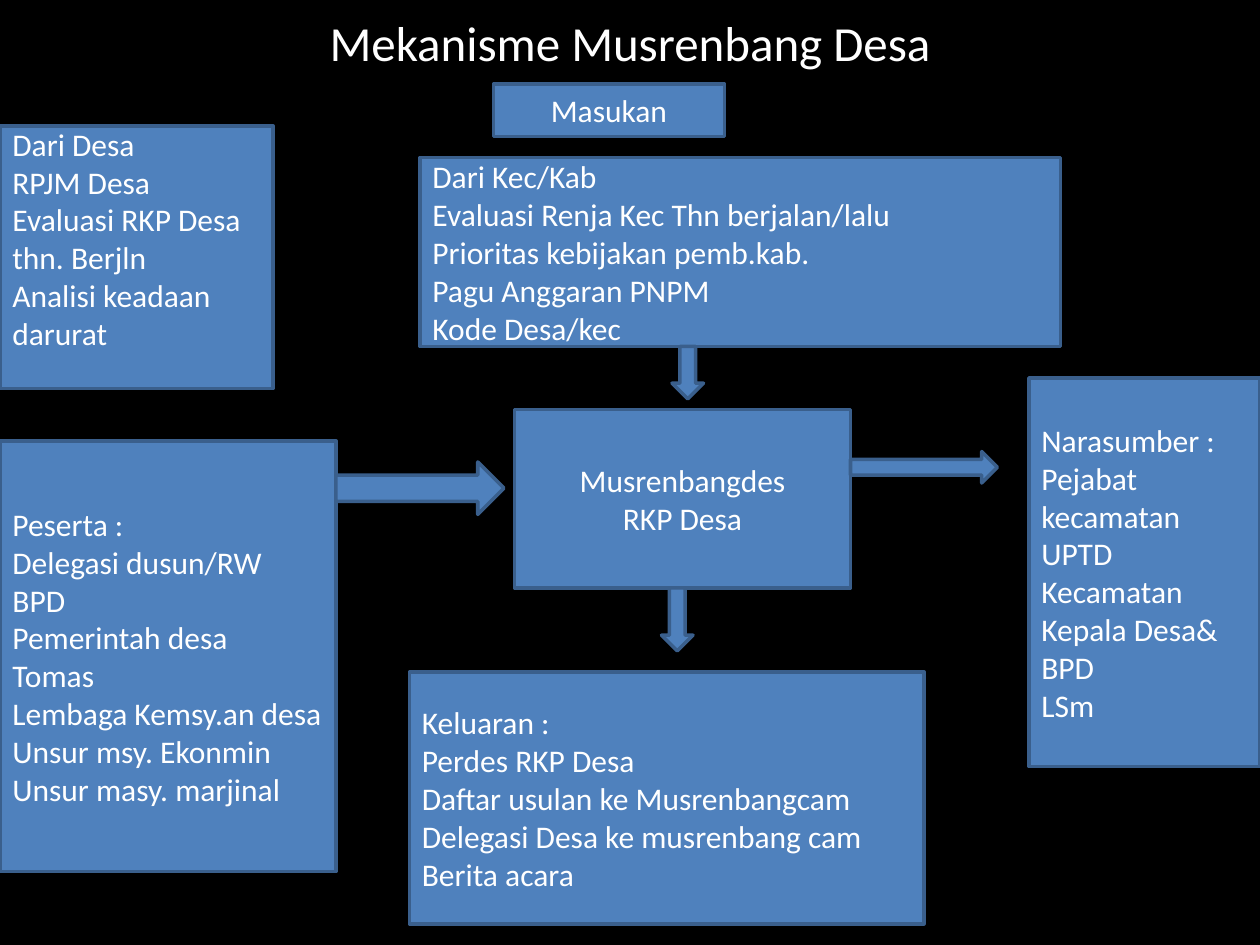
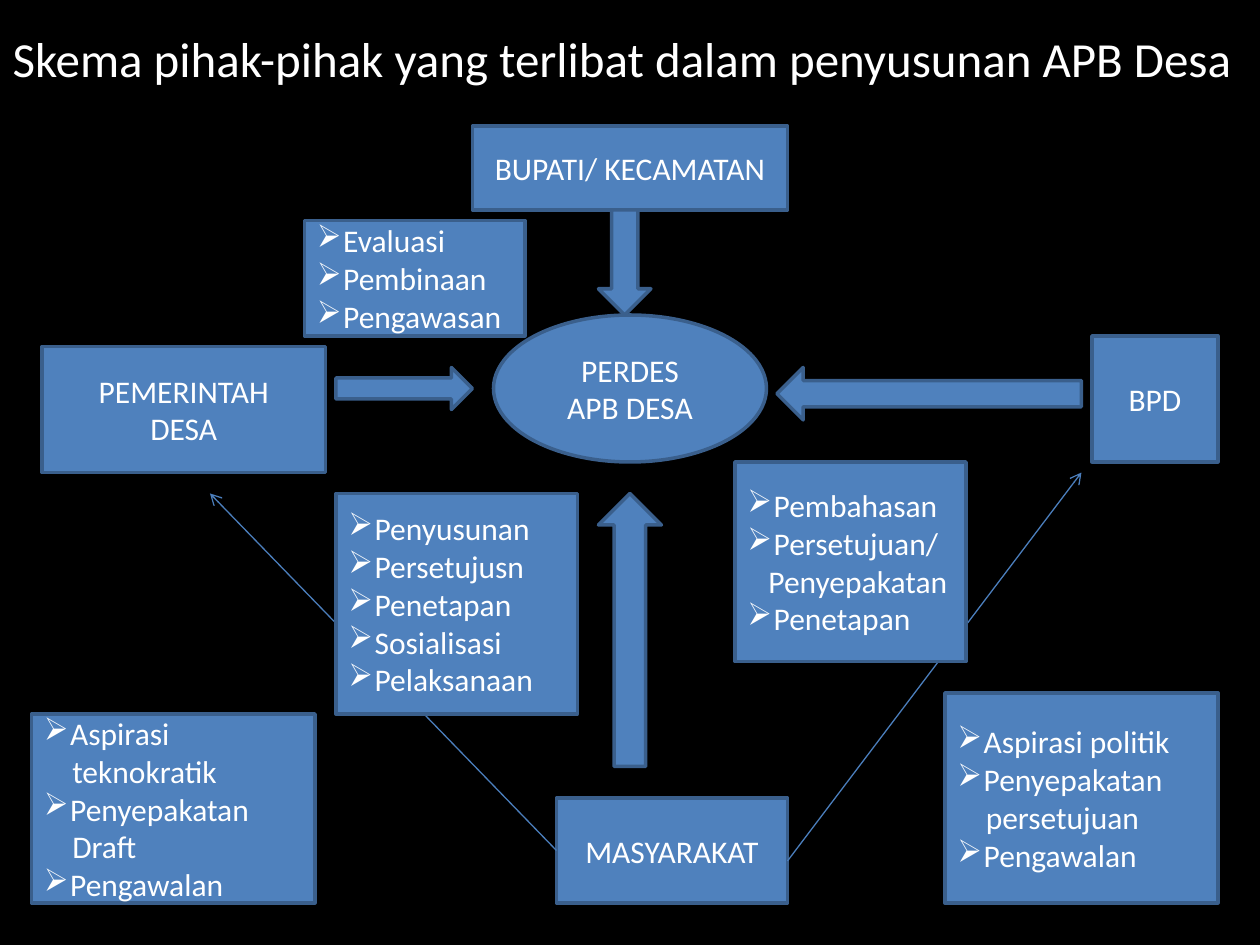
import pptx
import pptx.util
import pptx.dml.color
import pptx.enum.shapes
import pptx.enum.text
import pptx.oxml.ns
import lxml.etree

PX = 7620  # EMU per px, 120 px to the inch
WIDTH, HEIGHT = 1200, 900
BLACK, WHITE, BLUE, EDGE, THIN = "000000", "FFFFFF", "4F81BD", "3A5F8C", "4B7EBC"
FONT = "Calibri"
BULLET, HANG = "➢", 25

SHAPE = pptx.enum.shapes.MSO_SHAPE
ALIGN = pptx.enum.text.PP_ALIGN
MIDDLE = pptx.enum.text.MSO_ANCHOR.MIDDLE


def rgb(color):
    return pptx.dml.color.RGBColor.from_string(color)


def emu(*lengths):
    return [round(n * PX) for n in lengths]


def sub(parent, tag, **attrs):
    return lxml.etree.SubElement(parent, pptx.oxml.ns.qn(tag), attrs)


def set_all(target, values):
    for name, value in values.items():
        setattr(target, name, value)


def style_run(r, size):
    set_all(r.font, {"name": FONT, "size": pptx.util.Pt(size)})
    r.font.color.rgb = rgb(WHITE)


def add_title(prs, text, box, align):
    s = prs.slides.add_slide(prs.slide_layouts[5])
    title = s.shapes.title
    set_all(title, dict(zip(("left", "top", "width", "height"), emu(*box))))
    tf = title.text_frame
    set_all(tf, {"vertical_anchor": MIDDLE, "word_wrap": True,
                 "auto_size": pptx.enum.text.MSO_AUTO_SIZE.NONE})
    p = tf.paragraphs[0]
    p.alignment = align
    r = p.add_run()
    r.text = text
    style_run(r, 28)
    return s


def add_block(s, box, kind=SHAPE.RECTANGLE):
    sp = s.shapes.add_shape(kind, *emu(*box))
    sp.shadow.inherit = False
    sp.fill.solid()
    sp.fill.fore_color.rgb = rgb(BLUE)
    sp.line.color.rgb = rgb(EDGE)
    sp.line.width = pptx.util.Pt(2)
    return sp


def add_label(s, box, lines, align=ALIGN.CENTER, kind=SHAPE.RECTANGLE):
    """Block with one paragraph per line."""
    tf = add_block(s, box, kind).text_frame
    set_all(tf, {"vertical_anchor": MIDDLE, "word_wrap": True})
    for i, line in enumerate(lines):
        p = tf.add_paragraph() if i else tf.paragraphs[0]
        p.alignment = align
        r = p.add_run()
        r.text = line
        style_run(r, 18)
    return tf


def add_bullets(s, box, lines, indents):
    """Bulleted block; indents maps continuation lines to their margin."""
    tf = add_label(s, box, lines, ALIGN.LEFT)
    for p in tf.paragraphs:
        margin = indents.get(p.text)
        pPr = p._p.get_or_add_pPr()
        pPr.set("marL", str((margin or HANG) * PX))
        pPr.set("indent", str(0 if margin else -HANG * PX))
        if not margin:
            sub(pPr, "a:buChar", char=BULLET)


def add_thin_arrow(s, start, end):
    line = s.shapes.add_connector(pptx.enum.shapes.MSO_CONNECTOR.STRAIGHT,
                                  *emu(*start, *end))
    line.line.color.rgb = rgb(THIN)
    line.line.width = pptx.util.Pt(0.75)
    sub(line.line._get_or_add_ln(), "a:tailEnd", type="arrow")
    sub(line._element.spPr, "a:effectLst")


def draw_inputs(s, box):
    x, y, w, h = box
    add_label(s, (x + 470, y, 220, 50), ["Masukan"])
    village = add_label(s, (x, y + 40, 260, 250), [
        "Dari Desa", "RPJM Desa", "Evaluasi RKP Desa thn. Berjln",
        "Analisi keadaan darurat"], ALIGN.LEFT)
    village.margin_bottom = 42 * PX
    add_label(s, (x + 400, y + 70, 610, h - 70), [
        "Dari Kec/Kab", "Evaluasi Renja Kec Thn berjalan/lalu",
        "Prioritas kebijakan pemb.kab.", "Pagu Anggaran PNPM",
        "Kode Desa/kec"], ALIGN.LEFT)


def draw_people(s, box):
    x, y, w, h = box
    add_label(s, (x, y + 60, 320, h - 60), [
        "Peserta :", "Delegasi dusun/RW", "BPD", "Pemerintah desa", "Tomas",
        "Lembaga Kemsy.an desa", "Unsur msy. Ekonmin",
        "Unsur masy. marjinal"], ALIGN.LEFT)
    add_label(s, (x + w - 220, y, 220, 370), [
        "Narasumber :", "Pejabat kecamatan", "UPTD Kecamatan",
        "Kepala Desa& BPD", "LSm"], ALIGN.LEFT)


def draw_process(s, box):
    """Meeting with its four arrows, and the output below it."""
    x, y, w, h = box
    add_label(s, (x, y + h - 240, 490, 240), [
        "Keluaran :", "Perdes RKP Desa", "Daftar usulan ke Musrenbangcam",
        "Delegasi Desa ke musrenbang cam", "Berita acara"], ALIGN.LEFT)
    add_label(s, (x + 100, y + 60, 320, 170), ["Musrenbangdes", "RKP Desa"])
    for kind, dx, dy, aw, ah in (
            (SHAPE.RIGHT_ARROW, -70, 110, 160, 50),
            (SHAPE.RIGHT_ARROW, 420, 100, 140, 30),
            (SHAPE.DOWN_ARROW, 250, 0, 30, 50),
            (SHAPE.DOWN_ARROW, 240, 230, 30, 60)):
        add_block(s, (x + dx, y + dy, aw, ah), kind)


def draw_parties(s, box):
    """Village budget regulation in the middle, the parties around it."""
    x, y, w, h = box
    for lines, dx, dy, bw, bh, kind in (
            (["BUPATI/ KECAMATAN"], 410, 0, 300, 80, SHAPE.RECTANGLE),
            (["PERDES", "APB DESA"], 430, 180, 260, 140, SHAPE.OVAL),
            (["BPD"], 1000, 200, 120, 120, SHAPE.RECTANGLE),
            (["MASYARAKAT"], 490, 640, 220, 100, SHAPE.RECTANGLE),
            (["PEMERINTAH", "DESA"], 0, 210, 270, 120, SHAPE.RECTANGLE)):
        add_label(s, (x + dx, y + dy, bw, bh), lines, kind=kind)
    for kind, dx, dy, aw, ah in (
            (SHAPE.DOWN_ARROW, 530, 80, 50, 100),
            (SHAPE.UP_ARROW, 530, 350, 60, 260),
            (SHAPE.LEFT_ARROW, 700, 230, 290, 50),
            (SHAPE.RIGHT_ARROW, 280, 230, 130, 40)):
        add_block(s, (x + dx, y + dy, aw, ah), kind)
    add_thin_arrow(s, (x + 490, y + 690), (x + 160, y + 350))
    add_thin_arrow(s, (x + 710, y + 700), (x + 990, y + 330))


def draw_roles(s, box):
    x, y, w, h = box
    indents = {"persetujuan": 27, "teknokratik": 27, "Draft": 27, "Penyepakatan": 20}
    politics = ["Aspirasi politik", "Penyepakatan", "persetujuan", "Pengawalan"]
    technocrats = ["Aspirasi", "teknokratik", "Penyepakatan", "Draft", "Pengawalan"]
    oversight = ["Evaluasi", "Pembinaan", "Pengawasan"]
    approval = ["Pembahasan", "Persetujuan/", "Penyepakatan", "Penetapan"]
    drafting = ["Penyusunan", "Persetujusn", "Penetapan", "Sosialisasi", "Pelaksanaan"]
    for lines, dx, dy, bw, bh in (
            (politics, 870, 450, 260, 200),
            (technocrats, 0, 470, 270, 180),
            (oversight, 260, 0, 210, 110),
            (approval, 670, 230, 220, 190),
            (drafting, 290, 260, 230, 210)):
        # "Penyepakatan" continues a line only in the approval block
        margins = {k: v for k, v in indents.items()
                   if k != "Penyepakatan" or lines is approval}
        add_bullets(s, (x + dx, y + dy, bw, bh), lines, margins)


def main():
    prs = pptx.Presentation()
    prs.slide_width, prs.slide_height = emu(WIDTH, HEIGHT)
    fill = prs.slide_master.background.fill
    fill.solid()
    fill.fore_color.rgb = rgb(BLACK)

    # Village planning meeting
    s = add_title(prs, "Mekanisme Musrenbang Desa", (60, 0, 1080, 80), ALIGN.CENTER)
    draw_inputs(s, (0, 80, WIDTH, 250))
    draw_people(s, (0, 360, WIDTH, 470))
    draw_process(s, (390, 330, 490, 550))

    # Parties to the village budget
    s = add_title(prs, "Skema pihak-pihak yang terlibat dalam penyusunan APB Desa",
                  (0, 0, WIDTH, 110), ALIGN.LEFT)
    draw_parties(s, (40, 120, 1120, 740))
    draw_roles(s, (30, 210, 1130, 650))

    prs.save("out.pptx")


if __name__ == "__main__":
    main()
